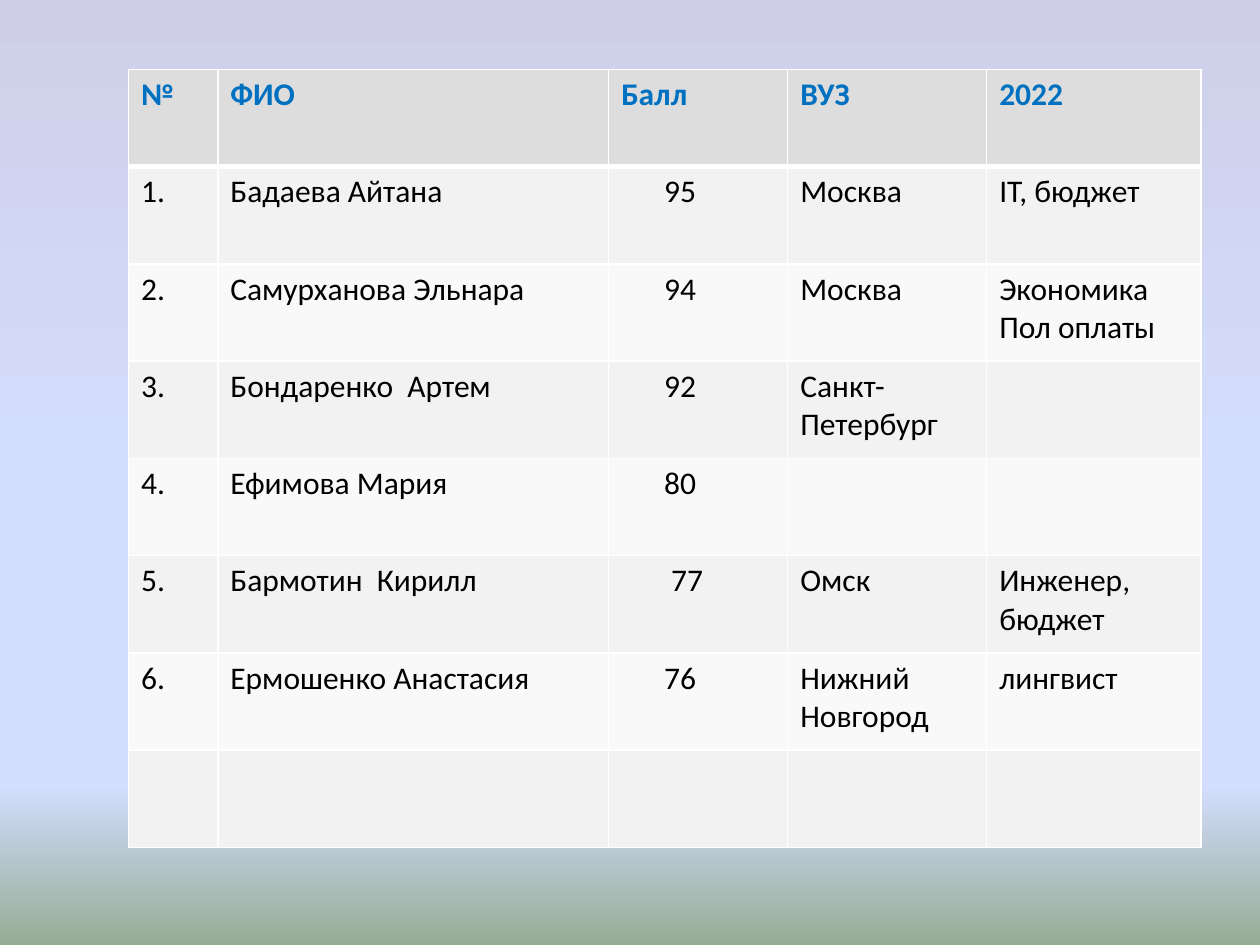
from copy import deepcopy

from lxml import etree
from pptx import Presentation
from pptx.dml.color import RGBColor
from pptx.oxml.ns import qn
from pptx.util import Cm, Pt

WHITE = RGBColor(0xFF, 0xFF, 0xFF)
BLACK = RGBColor(0x00, 0x00, 0x00)
HEADER_BLUE = RGBColor(0x00, 0x70, 0xC0)
HEADER_GRAY = RGBColor(0xDD, 0xDD, 0xDD)
ROW_GRAYS = (RGBColor(0xF9, 0xF9, 0xF9), RGBColor(0xF2, 0xF2, 0xF2))
SKY = (
    (0, RGBColor(0xCE, 0xCF, 0xE7)),
    (0.53, RGBColor(0xD4, 0xDE, 0xFF)),
    (0.83, RGBColor(0xD4, 0xDE, 0xFF)),
    (1, RGBColor(0x96, 0xAB, 0x94)),
)

COLUMN_WIDTHS = (1.8, 7.88, 3.61, 4.01, 4.32)
ROW_HEIGHT = 1.96
SCORE_COLUMN = 2
SCORE_MARGIN = 1.12
SCORE_MARGINS = {5: 1.26}

ROWS = (
    ("№", "ФИО", "Балл", "ВУЗ", "2022"),
    ("1.", "Бадаева Айтана", "95", "Москва", "IT, бюджет"),
    ("2.", "Самурханова Эльнара", "94", "Москва", "Экономика\nПол оплаты"),
    ("3.", "Бондаренко  Артем", "92", "Санкт-Петербург", ""),
    ("4.", "Ефимова Мария", "80", "", ""),
    ("5.", "Бармотин  Кирилл", "77", "Омск", "Инженер, бюджет"),
    ("6.", "Ермошенко Анастасия", "76", "Нижний Новгород", "лингвист"),
    ("", "", "", "", ""),
)


class SlideBuilder:
    font_name = "Calibri"
    font_size = Pt(18)

    def __init__(self, slide):
        self.slide = slide

    def background(self, stops):
        fill = self.slide.background.fill
        fill.gradient()
        fill.gradient_angle = 270
        stop_list = next(self.slide.element.iter(qn("a:gsLst")))
        while len(stop_list) < len(stops):
            stop_list.append(deepcopy(stop_list[0]))
        for stop, (position, color) in zip(fill.gradient_stops, stops):
            stop.position = position
            stop.color.rgb = color

    def table(self, left, top, widths, row_height, rows):
        frame = self.slide.shapes.add_table(
            len(rows), len(widths), Cm(left), Cm(top),
            Cm(sum(widths)), Cm(row_height * len(rows)))
        table = frame.table
        for column, width in zip(table.columns, widths):
            column.width = Cm(width)
        for row_index, values in enumerate(rows):
            table.rows[row_index].height = Cm(row_height)
            for column_index, text in enumerate(values):
                cell = table.cell(row_index, column_index)
                self.cell(cell, text, row_index)
                if row_index and column_index == SCORE_COLUMN:
                    margin = SCORE_MARGINS.get(row_index, SCORE_MARGIN)
                    cell.margin_left = Cm(margin)

    def cell(self, cell, text, row_index):
        header = row_index == 0
        cell.text_frame.text = text
        for para in cell.text_frame.paragraphs:
            para.font.size = self.font_size
            for span in para.runs:
                span.font.name = self.font_name
                span.font.size = self.font_size
                span.font.bold = header
                span.font.color.rgb = HEADER_BLUE if header else BLACK
        self.borders(cell, 3 if header else 1, 3 if row_index == 1 else 1)
        cell.fill.solid()
        cell.fill.fore_color.rgb = (
            HEADER_GRAY if header else ROW_GRAYS[row_index % 2])

    def borders(self, cell, bottom, top):
        properties = cell._tc.get_or_add_tcPr()
        for side, width in (("L", 1), ("R", 1), ("T", top), ("B", bottom)):
            line = etree.SubElement(
                properties, qn(f"a:ln{side}"), w=str(Pt(width)))
            solid = etree.SubElement(line, qn("a:solidFill"))
            etree.SubElement(solid, qn("a:srgbClr"), val=str(WHITE))


def main():
    deck = Presentation()
    deck.slide_width = Cm(25.4)
    deck.slide_height = Cm(19.05)
    page = SlideBuilder(deck.slides.add_slide(deck.slide_layouts[6]))
    page.background(SKY)
    page.table(2.59, 1.4, COLUMN_WIDTHS, ROW_HEIGHT, ROWS)
    deck.save("out.pptx")


if __name__ == "__main__":
    main()
